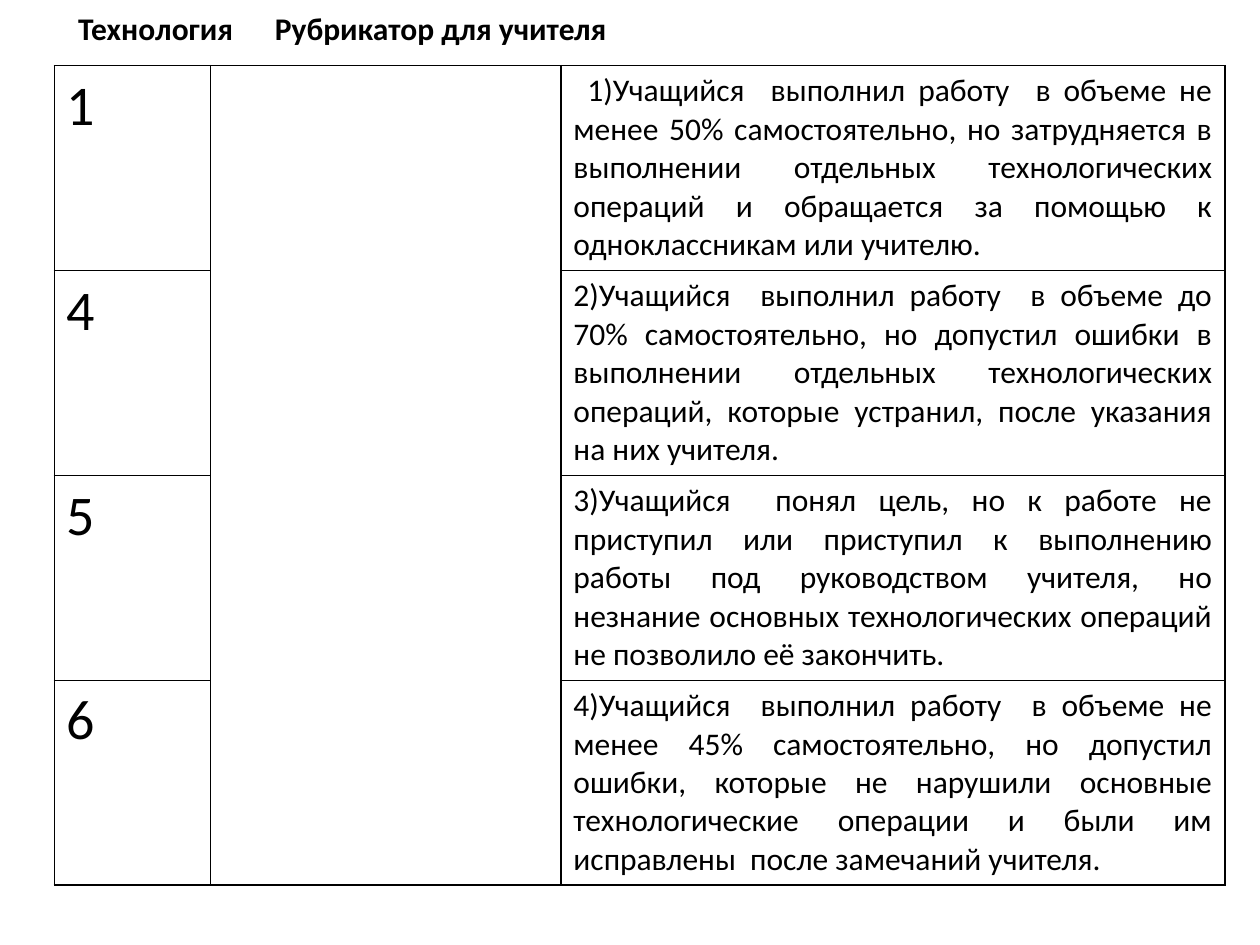
"""Build a slide with a teacher's rubric table for technology lessons."""
from dataclasses import dataclass

from lxml import etree
from pptx import Presentation
from pptx.dml.color import RGBColor
from pptx.enum import text
from pptx.oxml import ns
from pptx.util import Pt


@dataclass(frozen=True)
class Theme:
    font: str = "Calibri"
    ink: str = "000000"
    body: int = 18
    number: int = 32
    border: int = 1


THEME = Theme()
HEADING = "Технология\tРубрикатор для учителя"
COLUMNS = (89.3, 200.2, 379.4)
ROW_HEIGHT = 115.2
CRITERIA = (
    ("1", "1)Учащийся  выполнил работу  в объеме не менее 50% самостоятельно, "
          "но затрудняется в выполнении отдельных технологических операций "
          "и обращается за помощью к одноклассникам или учителю."),
    ("4", "2)Учащийся  выполнил работу  в объеме до 70% самостоятельно, "
          "но допустил ошибки в выполнении отдельных технологических операций, "
          "которые устранил, после указания на них учителя."),
    ("5", "3)Учащийся  понял цель, но к работе не приступил или приступил "
          "к выполнению работы под руководством учителя, но незнание основных "
          "технологических операций не позволило её закончить."),
    ("6", "4)Учащийся  выполнил работу  в объеме не менее 45% самостоятельно, "
          "но допустил ошибки, которые не нарушили основные технологические "
          "операции и были им исправлены  после замечаний учителя."),
)


def style_runs(para, size, bold=False):
    for span in para.runs:
        span.font.name = THEME.font
        span.font.size = Pt(size)
        span.font.bold = bold
        span.font.color.rgb = RGBColor.from_string(THEME.ink)


def add_tab_stop(para, position):
    stops = etree.SubElement(para._p.get_or_add_pPr(), ns.qn("a:tabLst"))
    etree.SubElement(stops, ns.qn("a:tab"), pos=str(Pt(position)), algn="l")


def add_heading(page):
    box = page.shapes.add_textbox(Pt(37.5), Pt(1.5), Pt(635), Pt(29))
    frame = box.text_frame
    frame.word_wrap = True
    frame.auto_size = text.MSO_AUTO_SIZE.SHAPE_TO_FIT_TEXT
    frame.text = HEADING
    para = frame.paragraphs[0]
    add_tab_stop(para, 112.5)
    style_runs(para, THEME.body, bold=True)


def style_cell(cell):
    properties = cell._tc.get_or_add_tcPr()
    for side in ("lnL", "lnR", "lnT", "lnB"):
        line = etree.SubElement(properties, ns.qn(f"a:{side}"), w=str(Pt(THEME.border)))
        fill = etree.SubElement(line, ns.qn("a:solidFill"))
        etree.SubElement(fill, ns.qn("a:srgbClr"), val=THEME.ink)
    cell.fill.background()


def write_cell(cell, words, size, align):
    cell.text_frame.text = words
    para = cell.text_frame.paragraphs[0]
    para.alignment = align
    style_runs(para, size)
    return para


def add_rubric(page):
    count = len(CRITERIA)
    frame = page.shapes.add_table(count, len(COLUMNS), Pt(31), Pt(37.5),
                                  Pt(sum(COLUMNS)), Pt(ROW_HEIGHT * count))
    table = frame.table
    table.first_row = table.horz_banding = False
    for column, width in zip(table.columns, COLUMNS):
        column.width = Pt(width)
    for row in table.rows:
        row.height = Pt(ROW_HEIGHT)
    for cell in table.iter_cells():
        style_cell(cell)
    table.cell(0, 1).merge(table.cell(count - 1, 1))
    for index, (number, criterion) in enumerate(CRITERIA):
        write_cell(table.cell(index, 0), number, THEME.number, text.PP_ALIGN.LEFT)
        para = write_cell(table.cell(index, 2), criterion, THEME.body,
                          text.PP_ALIGN.JUSTIFY)
        if index == 0:
            para._p.get_or_add_pPr().set("indent", str(Pt(8)))


def main():
    deck = Presentation()
    deck.slide_width, deck.slide_height = Pt(720), Pt(540)
    page = deck.slides.add_slide(deck.slide_layouts[6])
    add_rubric(page)
    add_heading(page)
    deck.save("out.pptx")


if __name__ == "__main__":
    main()
